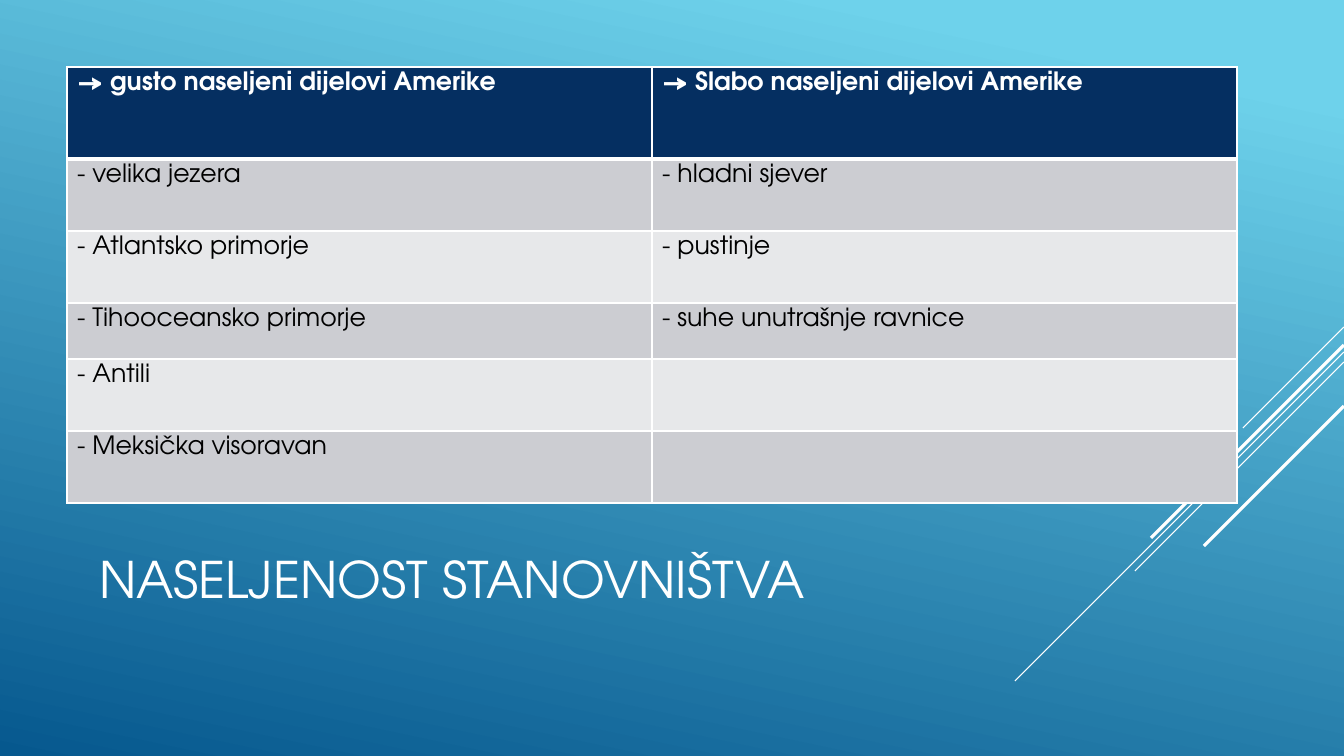
from lxml.etree import SubElement
from pptx import Presentation
from pptx.dml.color import RGBColor
from pptx.enum.shapes import MSO_CONNECTOR as Connector
from pptx.enum.text import MSO_ANCHOR as Anchor
from pptx.oxml import parse_xml
from pptx.oxml.ns import nsdecls, qn
from pptx.util import Pt

EMU_PER_PX = 12192000 / 1344
WIDTH, HEIGHT = 1344, 756
FONT = "TeX Gyre Adventor"
WHITE, BLACK, NAVY = "FFFFFF", "000000", "052F61"
BANDS = ("CCCDD2", "E7E8EA")

# Start height on the right edge, horizontal run, line width in points
DIAGONALS = (
    (327, 101, 0.75),
    (352, 329, 0.75),
    (362, 209, 0.75),
    (345, 193, 2.25),
    (406, 140, 2.25),
)
ROW_HEIGHTS = (92, 72, 72, 56, 72, 72)
ROWS = (
    ("→ gusto naseljeni dijelovi Amerike", "→ Slabo naseljeni dijelovi Amerike"),
    ("- velika jezera", "- hladni sjever"),
    ("- Atlantsko primorje", "- pustinje"),
    ("- Tihooceansko primorje", "- suhe unutrašnje ravnice"),
    ("- Antili", ""),
    ("- Meksička visoravan", ""),
)


def px(length):
    return round(length * EMU_PER_PX)


def color(value):
    return RGBColor.from_string(value)


def apply_format(target, values):
    for name, value in values.items():
        setattr(target, name, value)


def write_text(para, text, size, text_color, bold=False):
    span = para.add_run()
    span.text = text
    apply_format(span.font, {"name": FONT, "size": Pt(size), "bold": bold})
    span.font.color.rgb = color(text_color)


def paint_background(page):
    fill = page.background.fill
    fill.gradient()
    fill.gradient_angle = 360 - 102
    for stop, position, value in zip(fill.gradient_stops, (0.1, 1), ("6ED2EB", "06588E")):
        stop.position = position
        stop.color.rgb = color(value)


def add_diagonal(page, top, run, weight):
    """Draw a 45-degree line down and left from the right edge."""
    line = page.shapes.add_connector(
        Connector.STRAIGHT, px(WIDTH), px(top), px(WIDTH - run), px(top + run)
    )
    line.line.color.rgb = color(WHITE)
    line.line.width = Pt(weight)
    SubElement(line._element.spPr, qn("a:effectLst"))


def add_title(page, text):
    box = page.shapes.add_textbox(px(76), px(495), px(940), px(166))
    apply_format(box.text_frame, {
        "word_wrap": True,
        "vertical_anchor": Anchor.MIDDLE,
        "margin_left": px(23),
    })
    write_text(box.text_frame.paragraphs[0], text, 36, WHITE)


def set_borders(cell, weights):
    """Put white borders on a cell; weights maps L, R, T and B to points."""
    properties = cell._tc.get_or_add_tcPr()
    for index, (side, weight) in enumerate(weights.items()):
        properties.insert(index, parse_xml(
            f'<a:ln{side} {nsdecls("a")} w="{Pt(weight)}"><a:solidFill>'
            f'<a:srgbClr val="{WHITE}"/></a:solidFill></a:ln{side}>'
        ))


def fill_cell(cell, text, row):
    header = row == 0
    cell.fill.solid()
    cell.fill.fore_color.rgb = color(NAVY if header else BANDS[(row - 1) % 2])
    set_borders(cell, {"L": 1, "R": 1, "T": 3 if row == 1 else 1, "B": 3 if header else 1})
    if text:
        write_text(cell.text_frame.paragraphs[0], text, 18, WHITE if header else BLACK, header)


def add_population_table(page):
    table = page.shapes.add_table(
        len(ROWS), 2, px(67), px(67), px(1170), px(sum(ROW_HEIGHTS))
    ).table
    for row, (height, texts) in enumerate(zip(ROW_HEIGHTS, ROWS)):
        table.rows[row].height = px(height)
        for column, text in enumerate(texts):
            fill_cell(table.cell(row, column), text, row)


def main():
    deck = Presentation()
    apply_format(deck, {"slide_width": px(WIDTH), "slide_height": px(HEIGHT)})
    page = deck.slides.add_slide(deck.slide_layouts[6])
    paint_background(page)
    for diagonal in DIAGONALS:
        add_diagonal(page, *diagonal)
    add_title(page, "NASELJENOST STANOVNIŠTVA")
    add_population_table(page)
    deck.save("out.pptx")


if __name__ == "__main__":
    main()
